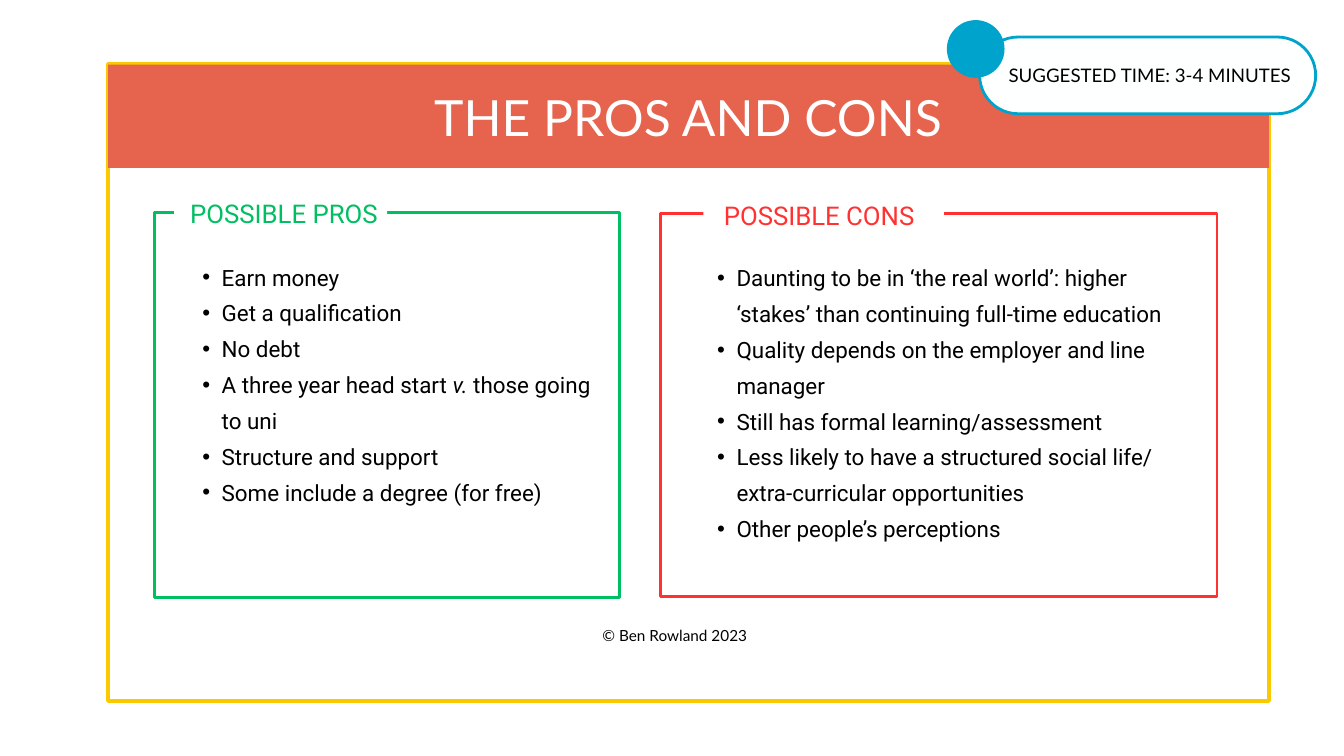
from typing import NamedTuple, Optional

from lxml.etree import SubElement
from pptx import Presentation
from pptx.dml.color import RGBColor
from pptx.enum.shapes import MSO_SHAPE
from pptx.enum.text import MSO_ANCHOR, MSO_AUTO_SIZE, PP_ALIGN
from pptx.oxml.ns import qn
from pptx.util import Cm, Pt

YELLOW, CORAL, BLUE = "FBC900", "E6634D", "00A3CC"
GREEN, RED = "00BF63", "FF3131"
WHITE, BLACK = "FFFFFF", "000000"


class Box(NamedTuple):
    """Position and size in centimetres."""
    left: float
    top: float
    width: float
    height: float

    def lengths(self) -> list:
        return [Cm(value) for value in self]


class Panel(NamedTuple):
    heading: str
    color: str
    frame: Box
    gap: Box
    heading_box: Box
    list_box: Box
    points: list


PANELS = [
    Panel("POSSIBLE PROS", GREEN,
          Box(5.84, 8.03, 17.58, 14.55), Box(6.58, 7.47, 8.05, 1.22),
          Box(7.19, 7.57, 10.8, 1.09), Box(6.93, 9.63, 15.42, 9.3),
          ["Earn money",
           "Get a qualification",
           "No debt",
           "A three year head start *v.* those going to uni",
           "Structure and support",
           "Some include a degree (for free)"]),
    Panel("POSSIBLE CONS", RED,
          Box(24.97, 8.08, 21.03, 14.48), Box(26.59, 7.47, 9.09, 1.24),
          Box(27.36, 7.65, 8.33, 1.09), Box(26.39, 9.65, 18.57, 11.99),
          ["Daunting to be in ‘the real world’: higher ‘stakes’ than "
           "continuing full-time education",
           "Quality depends on the employer and line manager",
           "Still has formal learning/assessment",
           "Less likely to have a structured social life/ "
           "extra-curricular opportunities",
           "Other people’s perceptions"]),
]


def rgb(color: str) -> RGBColor:
    return RGBColor.from_string(color)


def add_outline(slide, kind, box: Box, fill: Optional[str] = None,
                line: Optional[str] = None, weight: float = 3):
    shape = slide.shapes.add_shape(kind, *box.lengths())
    shape.shadow.inherit = False
    if fill:
        shape.fill.solid()
        shape.fill.fore_color.rgb = rgb(fill)
    else:
        shape.fill.background()
    if line:
        shape.line.color.rgb = rgb(line)
        shape.line.width = Pt(weight)
    else:
        shape.line.fill.background()
    return shape


def add_bullet(paragraph) -> None:
    paragraph.level = 1
    properties = paragraph._p.get_or_add_pPr()
    properties.set("marL", str(Cm(1.45)))
    properties.set("indent", str(Cm(-0.73)))
    SubElement(properties, qn("a:buFont")).set("typeface", "Arial")
    SubElement(properties, qn("a:buChar")).set("char", "•")


def write_text(shape, lines: list, *, size: float, spacing: float,
               font: str = "Lato", color: str = BLACK,
               align=PP_ALIGN.LEFT, bullets: bool = False) -> None:
    """Fill a shape with paragraphs; words between asterisks are italic."""
    frame = shape.text_frame
    frame.word_wrap = True
    frame.auto_size = MSO_AUTO_SIZE.NONE
    frame.vertical_anchor = MSO_ANCHOR.TOP
    frame.margin_left = frame.margin_right = 0
    frame.margin_top = frame.margin_bottom = 0
    for index, line in enumerate(lines):
        paragraph = frame.add_paragraph() if index else frame.paragraphs[0]
        paragraph.alignment = align
        paragraph.line_spacing = Pt(spacing)
        paragraph.space_before = Pt(0)
        if bullets:
            add_bullet(paragraph)
        for part, text in enumerate(line.split("*")):
            run = paragraph.add_run()
            run.text = text
            run.font.name = font
            run.font.size = Pt(size)
            run.font.color.rgb = rgb(color)
            if part % 2:
                run.font.italic = True


def add_text(slide, box: Box, lines: list, **text_format) -> None:
    write_text(slide.shapes.add_textbox(*box.lengths()), lines, **text_format)


def place_title(slide, box: Box, text: str) -> None:
    """Format the title placeholder and bring it in front of the band."""
    title = slide.shapes.title
    title.left, title.top, title.width, title.height = box.lengths()
    write_text(title, [text], size=53.4, spacing=58.8, color=WHITE,
               align=PP_ALIGN.CENTER)
    title.element.getparent().append(title.element)


def add_panel(slide, panel: Panel) -> None:
    add_outline(slide, MSO_SHAPE.RECTANGLE, panel.frame, line=panel.color)
    add_outline(slide, MSO_SHAPE.RECTANGLE, panel.gap, fill=WHITE)
    add_text(slide, panel.heading_box, [panel.heading], size=27.6,
             spacing=30.4, font="Roboto", color=panel.color)
    add_text(slide, panel.list_box, panel.points, size=24, spacing=38.4,
             font="Roboto", bullets=True)


def add_time_badge(slide) -> None:
    pill = add_outline(slide, MSO_SHAPE.ROUNDED_RECTANGLE,
                       Box(37.03, 1.4, 12.7, 2.9), fill="FEFFFF", line=BLUE)
    pill.adjustments[0] = 0.5
    add_outline(slide, MSO_SHAPE.OVAL, Box(35.79, 0.76, 2.18, 2.18), fill=BLUE)
    add_text(slide, Box(37.44, 2.29, 12.04, 0.97),
             ["SUGGESTED TIME: 3-4 MINUTES"], size=20, spacing=28,
             align=PP_ALIGN.CENTER)


def main() -> None:
    presentation = Presentation()
    presentation.slide_width, presentation.slide_height = Cm(50.8), Cm(28.575)
    slide = presentation.slides.add_slide(presentation.slide_layouts[5])

    add_outline(slide, MSO_SHAPE.RECTANGLE, Box(4.09, 2.44, 43.87, 24.05),
                line=YELLOW, weight=4.5)
    add_outline(slide, MSO_SHAPE.RECTANGLE, Box(4.09, 2.44, 43.87, 3.91),
                fill=CORAL)
    place_title(slide, Box(11.94, 3.48, 28.14, 2.13), "THE PROS AND CONS")
    for panel in PANELS:
        add_panel(slide, panel)
    add_text(slide, Box(22.76, 23.57, 5.49, 0.74), ["© Ben Rowland 2023"],
             size=16.4, spacing=23, align=PP_ALIGN.CENTER)
    add_time_badge(slide)

    presentation.save("out.pptx")


if __name__ == "__main__":
    main()
